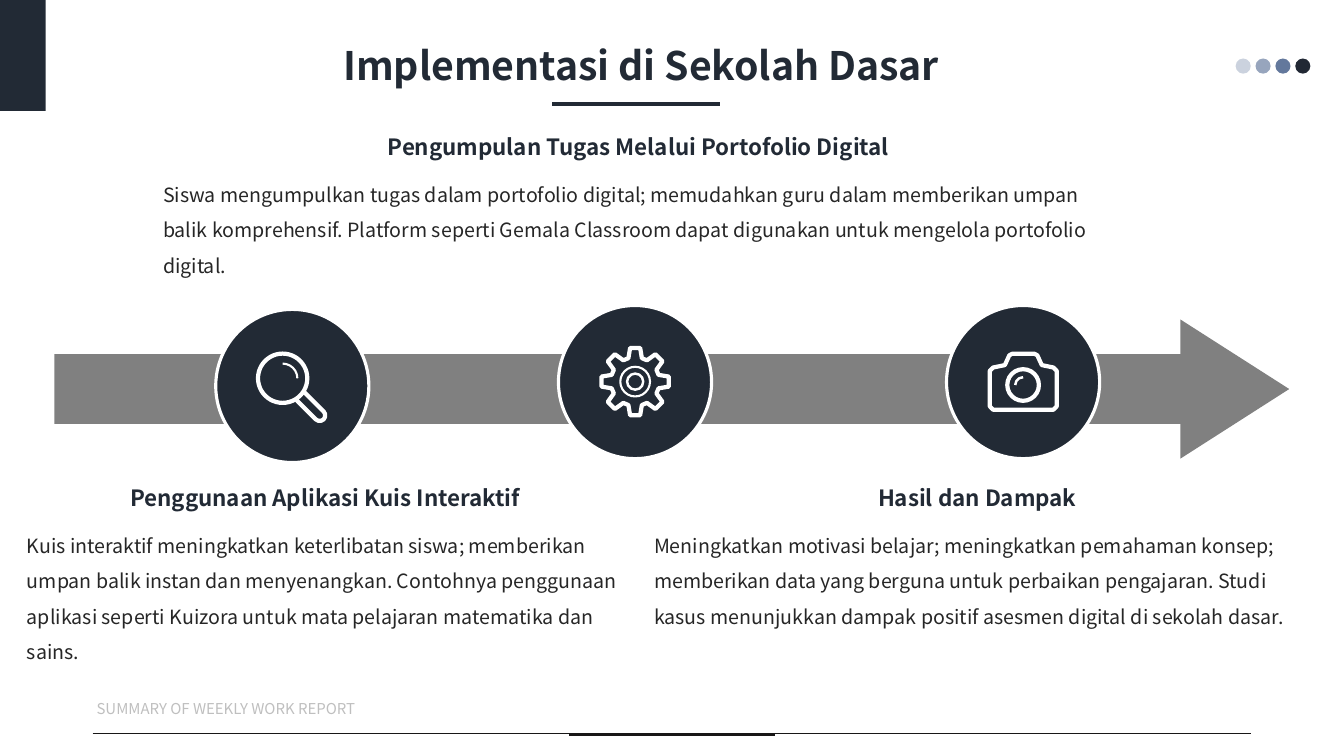
from math import cos, radians, sin

from lxml.etree import SubElement
from pptx import Presentation
from pptx.dml.color import RGBColor
from pptx.enum.shapes import MSO_CONNECTOR, MSO_SHAPE
from pptx.enum.text import MSO_AUTO_SIZE, PP_ALIGN
from pptx.oxml.ns import qn
from pptx.util import Pt

FONT = "Noto Sans CJK SC"
NAVY, WHITE, BLACK = "222A35", "FFFFFF", "181717"


def paint(shape, fill=None, line=None, weight=1):
    """Set fill and outline from hex strings; None means none."""
    shape.shadow.inherit = False
    if fill:
        shape.fill.solid()
        shape.fill.fore_color.rgb = RGBColor.from_string(fill)
    else:
        shape.fill.background()
    if line:
        shape.line.color.rgb = RGBColor.from_string(line)
        shape.line.width = Pt(weight)
    else:
        shape.line.fill.background()


def add_text(left, top, width, height, text, size, color, align, bold=False, spacing=None):
    box = slide.shapes.add_textbox(Pt(left), Pt(top), Pt(width), Pt(height))
    frame = box.text_frame
    frame.word_wrap = True
    frame.auto_size = MSO_AUTO_SIZE.SHAPE_TO_FIT_TEXT
    paragraph = frame.paragraphs[0]
    paragraph.alignment = align
    if spacing:
        paragraph.line_spacing = spacing
    run = paragraph.add_run()
    run.text = text
    run.font.name = FONT
    run.font.size = Pt(size)
    run.font.bold = bold
    run.font.color.rgb = RGBColor.from_string(color)


prs = Presentation()
prs.slide_width, prs.slide_height = Pt(960), Pt(540)
slide = prs.slides.add_slide(prs.slide_layouts[6])
shapes = slide.shapes

# Timeline arrow and its three stations
timeline = shapes.add_shape(MSO_SHAPE.RIGHT_ARROW, Pt(38.9), Pt(228.2), Pt(882), Pt(99.4))
timeline.adjustments[0], timeline.adjustments[1] = 0.5, 0.782
paint(timeline, "808080")
for left, top in ((154.1, 221), (398.9, 218.2), (676.1, 218.2)):
    station = shapes.add_shape(MSO_SHAPE.OVAL, Pt(left), Pt(top), Pt(109.4), Pt(109.4))
    paint(station, NAVY, WHITE, 2.25)

# Magnifier handle, partly covered by the lens
handle = shapes.add_shape(MSO_SHAPE.ROUNDED_RECTANGLE, Pt(208.55), Pt(286.2), Pt(26.5), Pt(8))
handle.adjustments[0] = 0.5
handle.rotation = 45
paint(handle, None, WHITE, 3)

# Camera body and gear rim, as closed outlines
camera_body = [(707, 265), (709.5, 262.5), (717.8, 260.8), (721, 253.8), (723, 252.7),
               (739, 252.7), (741, 253.8), (744.2, 260.8), (752.4, 262.5), (754.9, 265),
               (754.9, 290.2), (752.4, 292.7), (709.5, 292.7), (707, 290.2)]
gear_x, gear_y = 453.7, 272.6
gear_rim = [(gear_x + radius * cos(radians(tooth + turn)),
             gear_y + radius * sin(radians(tooth + turn)))
            for tooth in range(0, 360, 45)
            for turn, radius in ((-16, 17.4), (-8.5, 24.3), (8.5, 24.3), (16, 17.4))]
for corners in (camera_body, gear_rim):
    pen = shapes.build_freeform(Pt(corners[0][0]), Pt(corners[0][1]))
    pen.add_line_segments([(Pt(x), Pt(y)) for x, y in corners[1:]], close=True)
    paint(pen.convert_to_shape(), None, WHITE, 3)

# Rings and glints: kind, centre x, centre y, radius, weight, rotation
for kind, x, y, radius, weight, turn in (
    (MSO_SHAPE.OVAL, 201.9, 270.2, 17.6, 3, 0),
    (MSO_SHAPE.ARC, 201.9, 270.2, 10.5, 1.5, 0),
    (MSO_SHAPE.OVAL, gear_x, gear_y, 10.6, 1.5, 0),
    (MSO_SHAPE.OVAL, gear_x, gear_y, 5.75, 1.75, 0),
    (MSO_SHAPE.OVAL, 730.8, 275, 11.3, 3, 0),
    (MSO_SHAPE.ARC, 730.8, 275, 5.6, 1.75, 270),
):
    ring = shapes.add_shape(kind, Pt(x - radius), Pt(y - radius), Pt(2 * radius), Pt(2 * radius))
    ring.rotation = turn
    paint(ring, NAVY if kind == MSO_SHAPE.OVAL else None, WHITE, weight)

# Sections: left, top, width, heading, body
sections = [
    (12.2, 342, 440, "Penggunaan Aplikasi Kuis Interaktif",
     "Kuis interaktif meningkatkan keterlibatan siswa; memberikan umpan balik instan dan "
     "menyenangkan. Contohnya penggunaan aplikasi seperti Kuizora untuk mata pelajaran "
     "matematika dan sains."),
    (109.4, 91.4, 693.4, "Pengumpulan Tugas Melalui Portofolio Digital",
     "Siswa mengumpulkan tugas dalam portofolio digital; memudahkan guru dalam memberikan "
     "umpan balik komprehensif. Platform seperti Gemala Classroom dapat digunakan untuk "
     "mengelola portofolio digital."),
    (460.1, 342, 476, "Hasil dan Dampak",
     "Meningkatkan motivasi belajar; meningkatkan pemahaman konsep; memberikan data yang "
     "berguna untuk perbaikan pengajaran. Studi kasus menunjukkan dampak positif asesmen "
     "digital di sekolah dasar."),
]
for left, top, width, heading, body in sections:
    add_text(left, top, width, 26.6, heading, 16, NAVY, PP_ALIGN.CENTER, bold=True)
    add_text(left, top + 27.4, width, 64, body, 14, "262626", PP_ALIGN.LEFT, spacing=1.5)

# Corner block and dots
corner = shapes.add_shape(MSO_SHAPE.RECTANGLE, 0, 0, Pt(32.6), Pt(79.2))
paint(corner, NAVY)
for step, shade in enumerate(("CBD2DE", "97A5BD", "63789C", "212834")):
    dot = shapes.add_shape(MSO_SHAPE.OVAL, Pt(882.6 + 14.2 * step), Pt(41.8), Pt(10.8), Pt(10.8))
    paint(dot, shade)

# Title and footer with their rules
add_text(61.9, 496.1, 836.6, 20.2, "SUMMARY OF WEEKLY WORK REPORT", 10.7, "BFBFBF",
         PP_ALIGN.JUSTIFY)
add_text(32.4, 25.9, 851, 41, "Implementasi di Sekolah Dasar", 28, NAVY,
         PP_ALIGN.CENTER, bold=True)
for start, end, y, color, weight in (
    (66.2, 893.5, 524.2, BLACK, 0.5),
    (406.1, 553.7, 524.9, BLACK, 2.25),
    (394.6, 514.1, 74.2, NAVY, 3),
):
    rule = shapes.add_connector(MSO_CONNECTOR.STRAIGHT, Pt(start), Pt(y), Pt(end), Pt(y))
    rule.line.color.rgb = RGBColor.from_string(color)
    rule.line.width = Pt(weight)
    SubElement(rule._element.spPr, qn("a:effectLst"))

prs.save("out.pptx")
